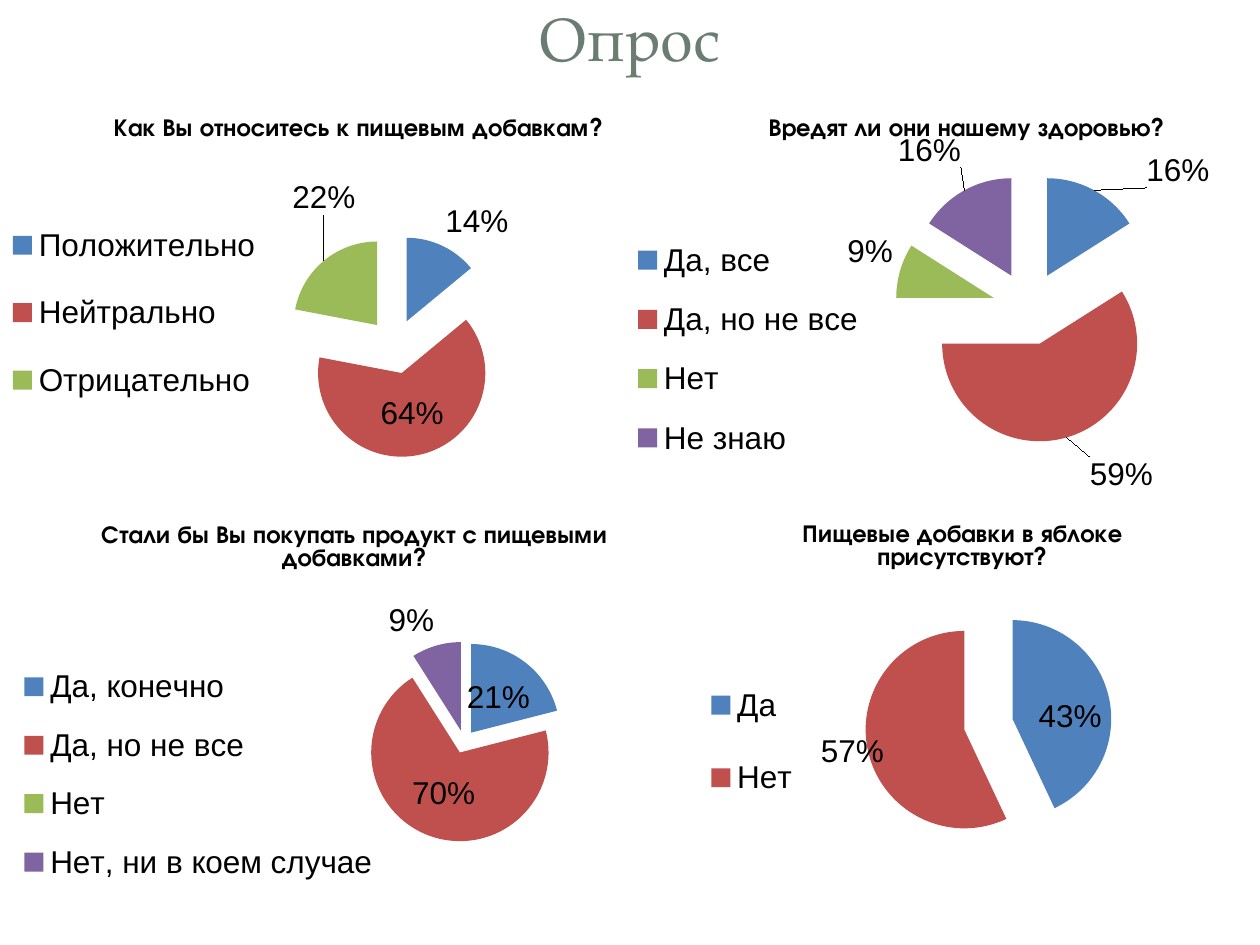
from lxml import etree
from pptx import Presentation
from pptx.chart.data import CategoryChartData
from pptx.dml.color import RGBColor
from pptx.enum.chart import XL_CHART_TYPE, XL_LABEL_POSITION, XL_LEGEND_POSITION
from pptx.enum.text import MSO_ANCHOR, PP_ALIGN
from pptx.oxml.ns import qn
from pptx.util import Pt

PIE = XL_CHART_TYPE.PIE
LEFT = XL_LEGEND_POSITION.LEFT
OUT = XL_LABEL_POSITION.OUTSIDE_END
IN = XL_LABEL_POSITION.INSIDE_END
MID = XL_LABEL_POSITION.CENTER

HEADING = "Опрос"
SLICE_COLORS = ["4F81BD", "C0504D", "9BBB59", "8064A2"]
POLLS = [
    {
        "question": "Как Вы относитесь к пищевым добавкам?",
        "answers": [
            ("Положительно", 14, OUT, None),
            ("Нейтрально", 64, MID, None),
            ("Отрицательно", 22, OUT, (0.05, -0.1)),
        ],
        "frame": (-2, 55, 414, 227),
        "pie": (0.14, 0.35, 0.82, 0.56),
        "key": (0.01, 0.25, 0.36, 0.59),
        "explosion": 33,
    },
    {
        "question": "Вредят ли они нашему здоровью?",
        "answers": [
            ("Да, все", 16, OUT, (0.07, 0.01)),
            ("Да, но не все", 59, OUT, (0.03, 0.03)),
            ("Нет", 9, OUT, None),
            ("Не знаю", 16, OUT, (0, -0.04)),
        ],
        "frame": (354, 55, 397, 233),
        "pie": (0.18, 0.19, 0.82, 0.66),
        "key": (0.01, 0.3, 0.35, 0.64),
        "explosion": 38,
    },
    {
        "question": "Стали бы Вы покупать продукт с пищевыми добавками?",
        "answers": [
            ("Да, конечно", 21, MID, None),
            ("Да, но не все", 70, MID, None),
            ("Нет", 0, None, None),
            ("Нет, ни в коем случае", 9, OUT, None),
        ],
        "frame": (0, 287, 405, 249),
        "pie": (0.31, 0.32, 0.69, 0.46),
        "key": (0.02, 0.33, 0.52, 0.59),
        "explosion": 13,
    },
    {
        "question": "Пищевые добавки в яблоке присутствуют?",
        "answers": [
            ("Да", 43, IN, None),
            ("Нет", 57, OUT, (0.04, -0.05)),
        ],
        "frame": (385, 287, 330, 217),
        "pie": (0.14, 0.26, 0.81, 0.65),
        "key": (0.06, 0.39, 0.15, 0.48),
        "explosion": 25,
    },
]


def style(font, face, size, color, bold=False):
    font.name = face
    font.size = Pt(size)
    font.bold = bold
    font.color.rgb = RGBColor.from_string(color)


def set_layout(parent, index, settings):
    for old in parent.findall(qn("c:layout")):
        parent.remove(old)
    layout = etree.Element(qn("c:layout"))
    manual = etree.SubElement(layout, qn("c:manualLayout"))
    for tag, value in settings:
        etree.SubElement(manual, qn("c:" + tag)).set("val", str(value))
    parent.insert(index, layout)


def edge_box(box):
    return [("xMode", "edge"), ("yMode", "edge"), *zip("xywh", box)]


def add_slices(series, poll):
    labels = series.data_labels
    labels.show_value = False
    labels.show_percentage = False
    for index, (_, share, position, shift) in enumerate(poll["answers"]):
        point = series.points[index]
        point.format.fill.solid()
        point.format.fill.fore_color.rgb = RGBColor.from_string(SLICE_COLORS[index])
        if not share:
            continue
        point.data_label.position = position
        label = labels._element.findall(qn("c:dLbl"))[-1]
        label.find(qn("c:showVal")).set("val", "0")
        label.find(qn("c:showPercent")).set("val", "1")
        if shift:
            set_layout(label, 1, zip("xy", shift))
    explosion = etree.Element(qn("c:explosion"))
    explosion.set("val", str(poll["explosion"]))
    series._element.find(qn("c:dPt")).addprevious(explosion)


def add_poll(slide, poll):
    data = CategoryChartData()
    data.categories = [answer[0] for answer in poll["answers"]]
    data.add_series("Series 1", [answer[1] for answer in poll["answers"]])
    frame = [Pt(length) for length in poll["frame"]]
    chart = slide.shapes.add_chart(PIE, *frame, data).chart
    style(chart.font, "Arial", 18, "000000")

    chart.has_title = True
    question = chart.chart_title.text_frame.paragraphs[0].add_run()
    question.text = poll["question"]
    style(question.font, "TeX Gyre Adventor", 14, "000000", True)
    for overlay in chart.chart_title._element.findall(qn("c:overlay")):
        overlay.set("val", "1")

    chart.has_legend = True
    chart.legend.position = LEFT
    chart.legend.include_in_layout = False
    set_layout(chart.legend._element, 1, edge_box(poll["key"]))

    plot = chart.plots[0]
    plot.vary_by_categories = True
    plot_area = plot._element.getparent()
    set_layout(plot_area, 0, [("layoutTarget", "inner"), *edge_box(poll["pie"])])
    add_slices(plot.series[0], poll)


def main():
    deck = Presentation()
    deck.slide_width, deck.slide_height = Pt(720), Pt(540)
    slide = deck.slides.add_slide(deck.slide_layouts[5])

    heading = slide.shapes.title
    heading.left, heading.top, heading.width, heading.height = Pt(0), Pt(-24), Pt(720), Pt(90)
    heading.text_frame.vertical_anchor = MSO_ANCHOR.MIDDLE
    paragraph = heading.text_frame.paragraphs[0]
    paragraph.alignment = PP_ALIGN.CENTER
    run = paragraph.add_run()
    run.text = HEADING
    style(run.font, "TeX Gyre Pagella", 35, "6B7D72")

    for poll in POLLS:
        add_poll(slide, poll)
    deck.save("out.pptx")


if __name__ == "__main__":
    main()
